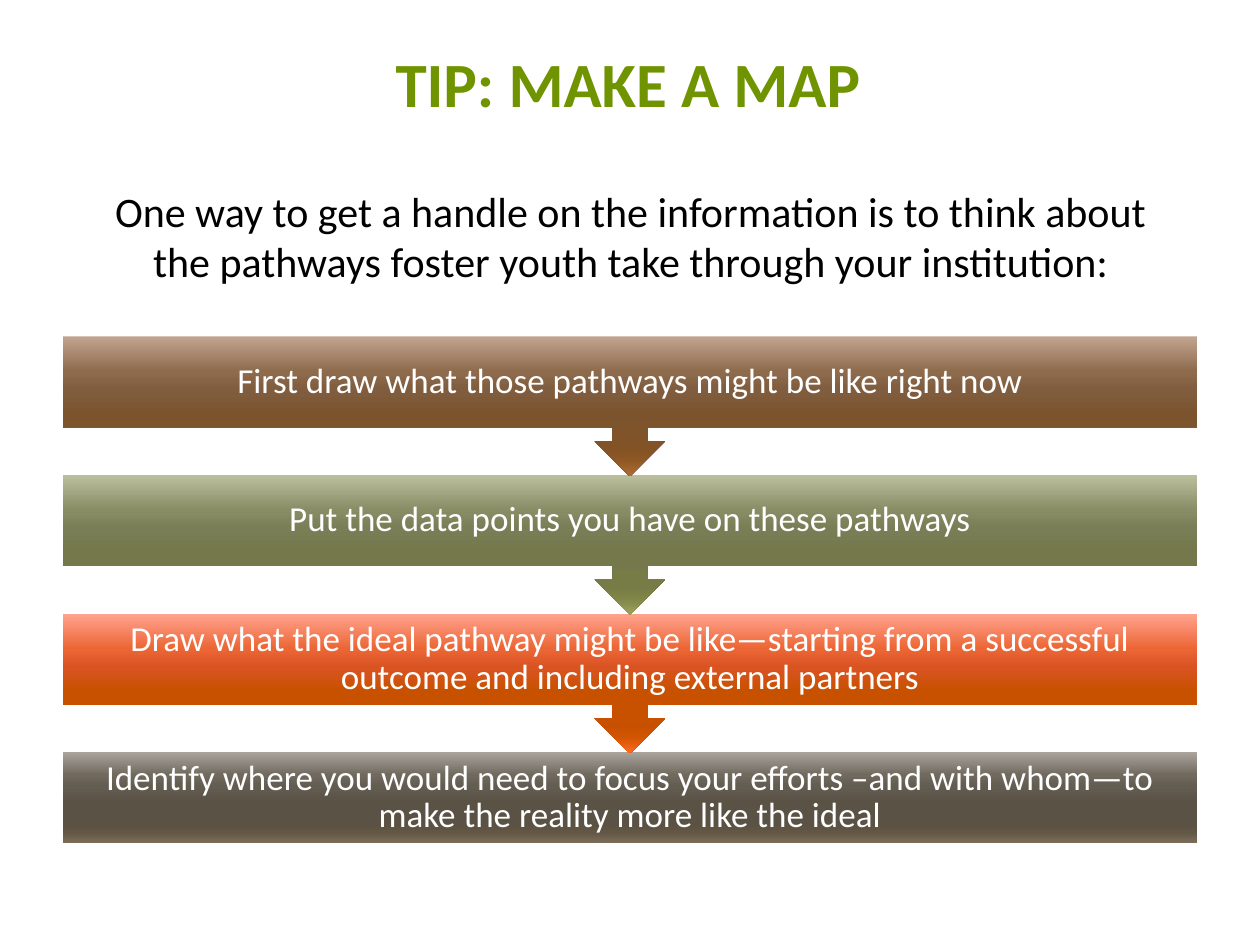
from lxml import etree
from pptx import Presentation
from pptx.dml.color import RGBColor
from pptx.enum import shapes, text
from pptx.oxml import ns
from pptx.util import Inches, Pt

COLORS = {
    "title": "6F9400",
    "body": "000000",
    "step": "FFFFFF",
    "brown": ["C2A48F", "8E6B4D", "815D40", "7B542E", "825326", "8E5723", "AC6D33"],
    "olive": ["BBBF9D", "898D66", "7A7E57", "74784B", "777B46", "7F8547", "9CA25C"],
    "orange": ["FFA490", "EC6635", "DA5423", "C85100", "C65000", "D15400", "FF6A22"],
    "taupe": ["AAA49D", "70695E", "635C51", "5A5245", "5C5242", "625644", "7A6C58"],
}
STOPS = [0, 25, 38, 55, 80, 88, 100]
FORMATS = {
    "title": {"size": Pt(36), "bold": True},
    "body": {"size": Pt(24), "bold": False},
    "step": {"size": Pt(20), "bold": False},
}
STEPS = [
    ("brown", "First draw what those pathways might be like right now"),
    ("olive", "Put the data points you have on these pathways"),
    ("orange", "Draw what the ideal pathway might be like—starting from a "
               "successful outcome and including external partners"),
    ("taupe", "Identify where you would need to focus your efforts –and with "
              "whom—to make the reality more like the ideal"),
]
LEFT, TOP, WIDTH = 0.5, 2.67, 9
BAR_HEIGHT, CALLOUT_HEIGHT, PITCH = 0.72, 1.11, 1.1


class SlideBuilder:
    font = "Calibri"

    def __init__(self, slide):
        self.s = slide

    def set_text(self, sp, words, style, anchor, spacing=1.0):
        tf = sp.text_frame
        tf.word_wrap = True
        tf.vertical_anchor = anchor
        p = tf.paragraphs[0]
        p.alignment = text.PP_ALIGN.CENTER
        p.line_spacing = spacing
        r = p.add_run()
        r.text = words
        for name, value in {"name": self.font, **FORMATS[style]}.items():
            setattr(r.font, name, value)
        r.font.color.rgb = RGBColor.from_string(COLORS[style])

    def label(self, box, words, style, anchor):
        sp = self.s.shapes.add_textbox(*map(Inches, box))
        self.set_text(sp, words, style, anchor)

    def shade(self, sp, colors):
        sp.fill.gradient()
        sp.fill.gradient_angle = 270
        stops = sp._element.spPr.find(".//" + ns.qn("a:gsLst"))
        for old in list(stops):
            stops.remove(old)
        for position, color in zip(STOPS, colors):
            stop = etree.SubElement(stops, ns.qn("a:gs"), pos=str(position * 1000))
            etree.SubElement(stop, ns.qn("a:srgbClr"), val=color)

    def step(self, top, words, color, has_arrow):
        kind = shapes.MSO_SHAPE.RECTANGLE
        height = BAR_HEIGHT
        if has_arrow:
            kind = shapes.MSO_SHAPE.DOWN_ARROW_CALLOUT
            height = CALLOUT_HEIGHT
        sp = self.s.shapes.add_shape(kind, *map(Inches, (LEFT, top, WIDTH, height)))
        if has_arrow:
            sp.adjustments[3] = BAR_HEIGHT / CALLOUT_HEIGHT
        sp.shadow.inherit = False
        sp.line.fill.background()
        self.shade(sp, COLORS[color])
        for side in ("left", "top", "right", "bottom"):
            setattr(sp.text_frame, f"margin_{side}", Inches(0.16))
        self.set_text(sp, words, "step", text.MSO_ANCHOR.MIDDLE, 0.9)


def main():
    prs = Presentation()
    prs.slide_width, prs.slide_height = Inches(10), Inches(7.5)
    builder = SlideBuilder(prs.slides.add_slide(prs.slide_layouts[6]))
    builder.label((0.47, 0.25, 9.03, 0.8), "TIP: MAKE A MAP", "title",
                  text.MSO_ANCHOR.MIDDLE)
    last = len(STEPS) - 1
    for i, (color, words) in reversed(list(enumerate(STEPS))):
        builder.step(TOP + i * PITCH, words, color, i < last)
    builder.label((0.67, 1.42, 8.67, 0.91),
                  "One way to get a handle on the information is to think about "
                  "the pathways foster youth take through your institution:",
                  "body", text.MSO_ANCHOR.TOP)
    prs.save("out.pptx")


if __name__ == "__main__":
    main()
